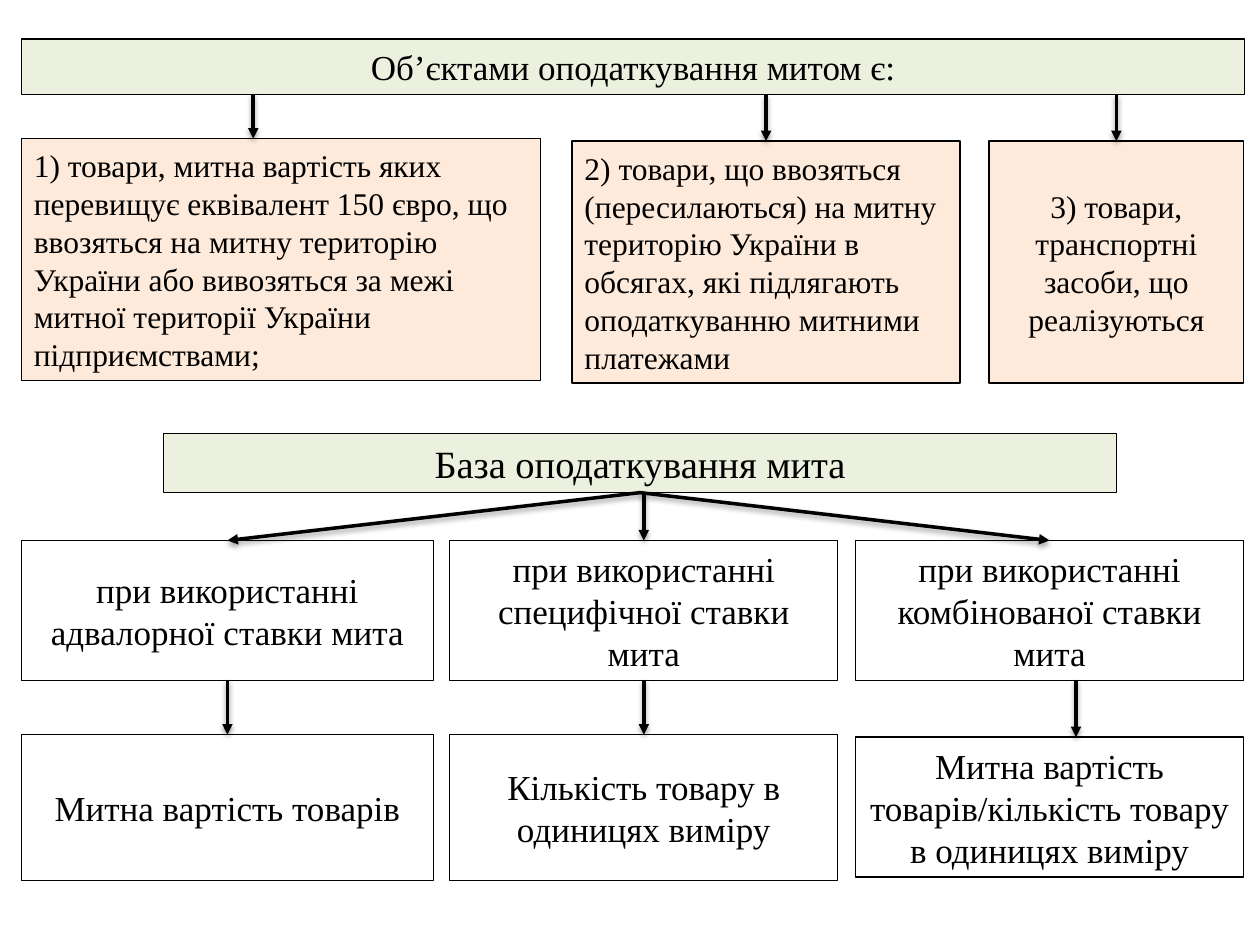
from dataclasses import dataclass

from lxml import etree
from pptx import Presentation
from pptx.dml.color import RGBColor
from pptx.enum.shapes import MSO_CONNECTOR, MSO_SHAPE
from pptx.enum.text import MSO_ANCHOR, PP_ALIGN
from pptx.oxml import parse_xml
from pptx.oxml.ns import nsdecls, qn
from pptx.util import Inches, Pt

RECTANGLE = MSO_SHAPE.RECTANGLE
STRAIGHT = MSO_CONNECTOR.STRAIGHT
MIDDLE = MSO_ANCHOR.MIDDLE
LEFT, CENTER = PP_ALIGN.LEFT, PP_ALIGN.CENTER
TOP_SITE, BOTTOM_SITE = 0, 2


@dataclass(frozen=True)
class Theme:
    font: str = "Times New Roman"
    ink: RGBColor = RGBColor(0, 0, 0)
    header: RGBColor = RGBColor(0xEB, 0xF1, 0xDE)
    item: RGBColor = RGBColor(0xFD, 0xEA, 0xDA)
    plain: RGBColor = RGBColor(255, 255, 255)
    item_size: Pt = Pt(18)
    body_size: Pt = Pt(20)
    title_size: Pt = Pt(22)
    border: Pt = Pt(0.75)
    arrow: Pt = Pt(2)


THEME = Theme()

ARROW_SHADOW = f"""<a:effectLst {nsdecls("a")}>
  <a:outerShdw blurRad="{Pt(3.1)}" dist="{Pt(1.6)}" dir="5400000" rotWithShape="0">
    <a:srgbClr val="000000"><a:alpha val="38000"/></a:srgbClr>
  </a:outerShdw>
</a:effectLst>"""

OBJECTS = [  # left, top, width, alignment, arrow x (None: middle of the box), text
    (0, 0.79, 4.12, LEFT, 1.84,
     "1) товари, митна вартість яких перевищує еквівалент 150 євро, що ввозяться "
     "на митну територію України або вивозяться за межі митної території України "
     "підприємствами;"),
    (4.37, 0.81, 3.08, LEFT, None,
     "2) товари, що ввозяться (пересилаються) на митну територію України в обсягах, "
     "які підлягають оподаткуванню митними платежами"),
    (7.68, 0.81, 2.02, CENTER, None,
     "3) товари, транспортні засоби, що реалізуються"),
]

RATES = [  # left, width, base top, base height, base text, rate text
    (0, 3.27, 2.39, 1.16, "Митна вартість товарів",
     "при використанні адвалорної ставки мита"),
    (3.4, 3.08, 2.39, 1.16, "Кількість товару в одиницях виміру",
     "при використанні специфічної ставки мита"),
    (6.62, 3.08, 2.41, 1.11, "Митна вартість товарів/кількість товару в одиницях виміру",
     "при використанні комбінованої ставки мита"),
]


def add_box(slide, left, top, width, height, text, fill, size, alignment=CENTER):
    shape = slide.shapes.add_shape(
        RECTANGLE, Inches(left), Inches(top), Inches(width), Inches(height))
    shape.shadow.inherit = False
    shape.fill.solid()
    shape.fill.fore_color.rgb = fill
    shape.line.color.rgb = THEME.ink
    shape.line.width = THEME.border
    frame = shape.text_frame
    frame.word_wrap = True
    frame.vertical_anchor = MIDDLE
    paragraph = frame.paragraphs[0]
    paragraph.text = text
    paragraph.alignment = alignment
    paragraph.font.name = THEME.font
    paragraph.font.size = size
    paragraph.font.color.rgb = THEME.ink
    return shape


def add_arrow(slide, start, end, source=None, target=None):
    """Draw an arrow; a given source or target box is joined at its middle."""
    connector = slide.shapes.add_connector(
        STRAIGHT, *(Inches(value) for value in (*start, *end)))
    connector.line.color.rgb = THEME.ink
    connector.line.width = THEME.arrow
    etree.SubElement(connector.line._get_or_add_ln(), qn("a:tailEnd"), type="triangle")
    connector._element.spPr.append(parse_xml(ARROW_SHADOW))
    if source is not None:
        connector.begin_connect(source, BOTTOM_SITE)
    if target is not None:
        connector.end_connect(target, TOP_SITE)


def add_taxed_objects(slide, left, top, width):
    header_height = 0.44
    add_box(slide, left, top, width, header_height,
            "Об’єктами оподаткування митом є:", THEME.header, THEME.body_size)
    for offset, drop, box_width, alignment, arrow_offset, text in OBJECTS:
        box = add_box(slide, left + offset, top + drop, box_width, 1.92,
                      text, THEME.item, THEME.item_size, alignment)
        joined = arrow_offset is None
        x = left + (offset + box_width / 2 if joined else arrow_offset)
        add_arrow(slide, (x, top + header_height), (x, top + drop),
                  target=box if joined else None)


def add_tax_base(slide, left, top):
    header_left, header_width, header_height = left + 1.13, 7.56, 0.47
    rate_top, rate_height = top + 0.85, 1.11
    header = add_box(slide, header_left, top, header_width, header_height,
                     "База оподаткування мита", THEME.header, THEME.title_size)
    header_bottom = (header_left + header_width / 2, top + header_height)

    for index, (offset, width, drop, height, base_text, rate_text) in enumerate(RATES):
        x = left + offset + width / 2
        rate = add_box(slide, left + offset, rate_top, width, rate_height,
                       rate_text, THEME.plain, THEME.body_size)
        base = add_box(slide, left + offset, top + drop, width, height,
                       base_text, THEME.plain, THEME.body_size)
        if index == 1:
            add_arrow(slide, (x, header_bottom[1]), (x, rate_top), target=rate)
        else:
            add_arrow(slide, header_bottom, (x, rate_top), header, rate)
        if index == 2:
            x += 0.21
            add_arrow(slide, (x, rate_top + rate_height), (x, top + drop))
        else:
            add_arrow(slide, (x, rate_top + rate_height), (x, top + drop), rate, base)


def main():
    presentation = Presentation()
    presentation.slide_width = Inches(10)
    presentation.slide_height = Inches(7.5)
    slide = presentation.slides.add_slide(presentation.slide_layouts[6])
    add_taxed_objects(slide, 0.17, 0.31, 9.71)
    add_tax_base(slide, 0.17, 3.44)
    presentation.save("out.pptx")


if __name__ == "__main__":
    main()
